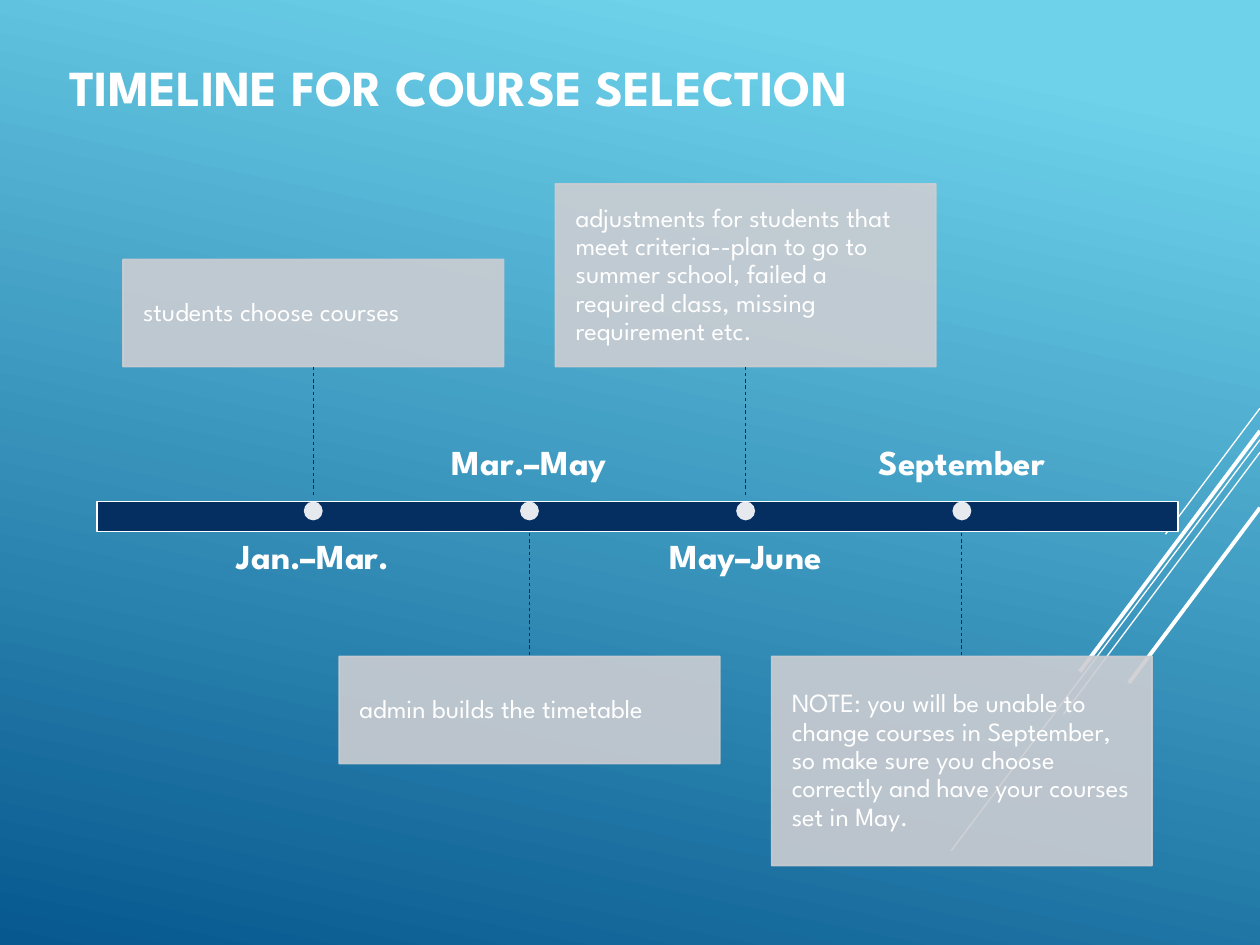
from lxml import etree
from pptx import Presentation
from pptx import util as u
from pptx.dml.color import RGBColor
from pptx.enum import dml, shapes, text
from pptx.oxml import ns

FONT = "League Spartan"
WHITE, NAVY, GREY = "FFFFFF", "052F61", "CCCDD2"
SKY, OCEAN = "6ED2EB", "06588E"

WIDTH, HEIGHT = 10, 7.5
BAR_LEFT, BAR_TOP, BAR_WIDTH, BAR_HEIGHT = 0.77, 3.98, 8.58, 0.24
COLUMN = BAR_WIDTH / 5
CARD_WIDTH, LABEL_WIDTH, LABEL_HEIGHT, DOT = 3.02, 2.75, 0.68, 0.15
UPPER_EDGE, LOWER_EDGE = 2.91, 5.21

# Label, card text, card height; cards alternate above and below the bar
STEPS = [
    ("Jan.–Mar.", "students choose courses", 0.85),
    ("Mar.–May", "admin builds the timetable", 0.85),
    ("May–June", "adjustments for students that meet criteria--plan to go to "
     "summer school, failed a required class, missing requirement etc.", 1.45),
    ("September", "NOTE: you will be unable to change courses in September, so "
     "make sure you choose correctly and have your courses set in May.", 1.66),
]

# Start x, start y, end x, end y, line width
CORNER_LINES = [
    (10, 3.24, 9.25, 4.24, 0.75),
    (10, 3.49, 7.55, 6.75, 0.75),
    (10, 3.59, 8.44, 5.67, 0.75),
    (10, 3.42, 8.57, 5.33, 2.25),
    (10, 4.03, 8.96, 5.42, 2.25),
]


def color(hex_value):
    return RGBColor.from_string(hex_value)


def set_alpha(fill_parent, percent):
    """Make the solid fill inside an XML element partly transparent."""
    rgb = fill_parent.find(ns.qn("a:solidFill")).find(ns.qn("a:srgbClr"))
    etree.SubElement(rgb, ns.qn("a:alpha"), val=str(percent * 1000))


def add_box(slide, kind, left, top, width, height, fill=None, line=None, alpha=None):
    shape = slide.shapes.add_shape(kind, *map(u.Inches, (left, top, width, height)))
    shape.shadow.inherit = False
    if fill:
        shape.fill.solid()
        shape.fill.fore_color.rgb = color(fill)
        if alpha:
            set_alpha(shape.fill._xPr, alpha)
    if line:
        shape.line.color.rgb = color(line)
        shape.line.width = u.Pt(1)
        if alpha:
            set_alpha(shape.line._get_or_add_ln(), alpha)
    else:
        shape.line.fill.background()
    return shape


def add_line(slide, x1, y1, x2, y2, line, width, dash=None):
    connector = slide.shapes.add_connector(
        shapes.MSO_CONNECTOR.STRAIGHT, *map(u.Inches, (x1, y1, x2, y2)))
    connector.line.color.rgb = color(line)
    connector.line.width = u.Pt(width)
    if dash:
        connector.line.dash_style = dash
    etree.SubElement(connector._element.spPr, ns.qn("a:effectLst"))


def write(shape, words, size, anchor, inset, align=text.PP_ALIGN.LEFT,
          bold=False, spacing=0.9):
    frame = shape.text_frame
    frame.word_wrap = True
    frame.auto_size = text.MSO_AUTO_SIZE.NONE
    frame.vertical_anchor = anchor
    frame.margin_left = frame.margin_right = u.Inches(inset[0])
    frame.margin_top = frame.margin_bottom = u.Inches(inset[1])
    paragraph = frame.paragraphs[0]
    paragraph.alignment = align
    paragraph.line_spacing = spacing
    run = paragraph.add_run()
    run.text = words
    run.font.name = FONT
    run.font.size = u.Pt(size)
    run.font.bold = bold
    run.font.color.rgb = color(WHITE)


def add_text(slide, left, top, width, height, *args, **options):
    box = slide.shapes.add_textbox(*map(u.Inches, (left, top, width, height)))
    write(box, *args, **options)


def add_backdrop(slide):
    backdrop = add_box(slide, shapes.MSO_SHAPE.RECTANGLE, 0, 0, WIDTH, HEIGHT)
    backdrop.fill.gradient()
    backdrop.fill.gradient_angle = 258
    stops = zip(backdrop.fill.gradient_stops, (0.1, 1), (SKY, OCEAN))
    for stop, position, hex_value in stops:
        stop.position = position
        stop.color.rgb = color(hex_value)
    for *ends, width in CORNER_LINES:
        add_line(slide, *ends, WHITE, width)


def add_step(slide, number, label, words, card_height):
    center = BAR_LEFT + COLUMN * number
    card_above = number % 2 == 1
    if card_above:
        card_top, stem = UPPER_EDGE - card_height, (UPPER_EDGE, 3.94)
        label_top, label_anchor = 4.28, text.MSO_ANCHOR.TOP
    else:
        card_top, stem = LOWER_EDGE, (4.18, LOWER_EDGE)
        label_top, label_anchor = 3.15, text.MSO_ANCHOR.BOTTOM

    add_text(slide, center - LABEL_WIDTH / 2, label_top, LABEL_WIDTH, LABEL_HEIGHT,
             label, 20, label_anchor, (0, 0), text.PP_ALIGN.CENTER, bold=True)
    card = add_box(slide, shapes.MSO_SHAPE.RECTANGLE, center - CARD_WIDTH / 2,
                   card_top, CARD_WIDTH, card_height, GREY, GREY, 90)
    write(card, words, 15, text.MSO_ANCHOR.MIDDLE, (0.16, 0.16))
    add_line(slide, center, stem[0], center, stem[1], NAVY, 0.5,
             dml.MSO_LINE.DASH)
    add_box(slide, shapes.MSO_SHAPE.OVAL, center - DOT / 2, BAR_TOP, DOT, DOT,
            WHITE, alpha=90)


def main():
    presentation = Presentation()
    presentation.slide_width = u.Inches(WIDTH)
    presentation.slide_height = u.Inches(HEIGHT)
    slide = presentation.slides.add_slide(presentation.slide_layouts[6])

    add_backdrop(slide)
    add_text(slide, 0.45, 0.26, 6.8, 0.85, "TIMELINE FOR COURSE SELECTION", 28.8,
             text.MSO_ANCHOR.MIDDLE, (0.1, 0.05), bold=True, spacing=1.0)
    add_box(slide, shapes.MSO_SHAPE.RECTANGLE, BAR_LEFT, BAR_TOP, BAR_WIDTH,
            BAR_HEIGHT, NAVY, WHITE)
    for number, step in enumerate(STEPS, start=1):
        add_step(slide, number, *step)

    presentation.save("out.pptx")


if __name__ == "__main__":
    main()
